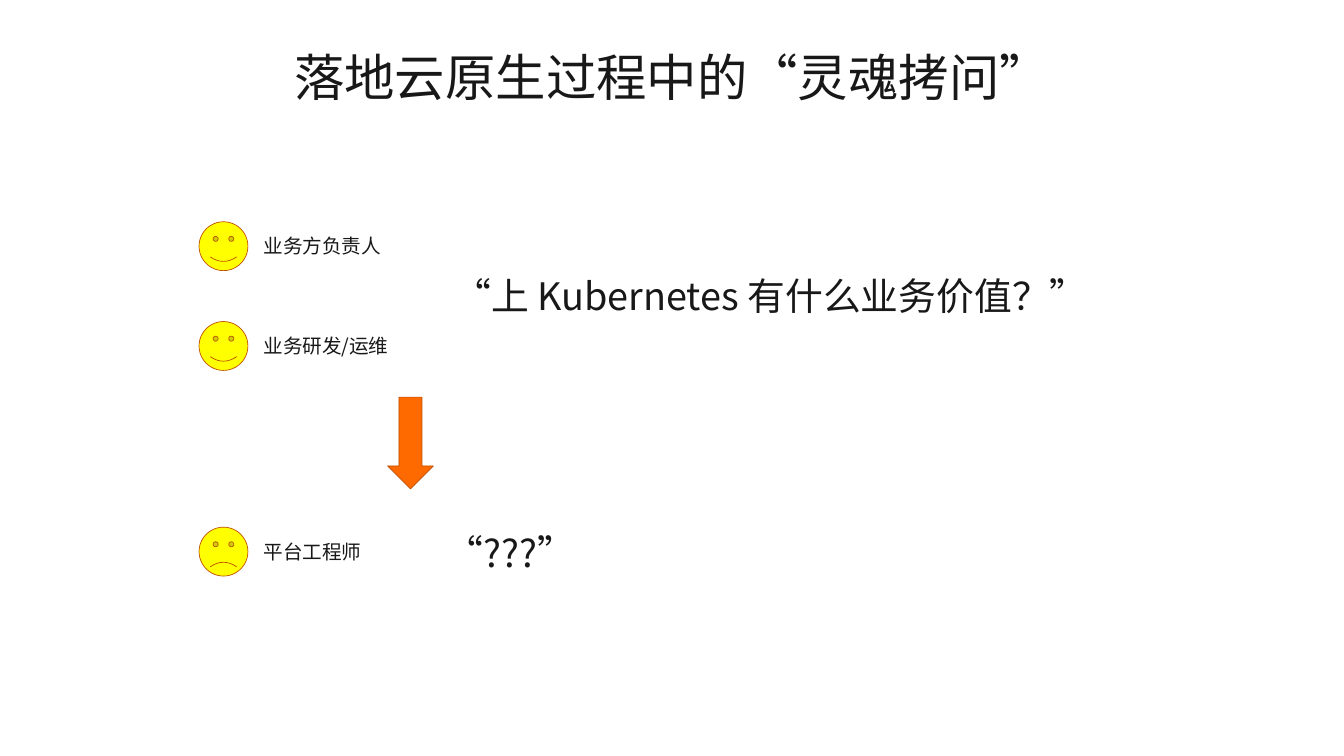
from pptx import Presentation
from pptx.dml.color import RGBColor
from pptx.enum.lang import MSO_LANGUAGE_ID
from pptx.enum.shapes import MSO_SHAPE
from pptx.enum.text import MSO_ANCHOR, MSO_AUTO_SIZE, PP_ALIGN
from pptx.oxml.ns import qn
from pptx.util import Pt
from lxml import etree

EMU_PER_PX = 9144
FONT = "Noto Sans CJK SC"
INK = RGBColor(0x18, 0x18, 0x18)
YELLOW = RGBColor(0xFF, 0xFF, 0x00)
ORANGE = RGBColor(0xFF, 0x6A, 0x00)
BROWN = RGBColor(0xBD, 0x4E, 0x00)
CHINESE = MSO_LANGUAGE_ID.SIMPLIFIED_CHINESE
SMILEY, DOWN_ARROW = MSO_SHAPE.SMILEY_FACE, MSO_SHAPE.DOWN_ARROW
TOP, LEFT, CENTER = MSO_ANCHOR.TOP, PP_ALIGN.LEFT, PP_ALIGN.CENTER
NO_AUTOFIT = MSO_AUTO_SIZE.NONE

FACE_SIZE = 97
SMILE, FROWN = 0.047, -0.047
PEOPLE = [
    ("业务方负责人", (395, 440, 374, 97), SMILE),
    ("业务研发/运维", (395, 638, 391, 97), SMILE),
    ("平台工程师", (395, 1046, 335, 97), FROWN),
]
QUOTES = [
    ("“上 Kubernetes 有什么业务价值？”", (890, 537, 1308, 101)),
    ("“???”", (875, 1046, 282, 101)),
]


def px(*lengths):
    """Turn px lengths into EMU."""
    return [length * EMU_PER_PX for length in lengths]


def write_text(shape, text, size, alignment=LEFT):
    """Put one formatted paragraph into a shape."""
    text_frame = shape.text_frame
    text_frame.text = text
    text_frame.word_wrap = True
    text_frame.auto_size = NO_AUTOFIT
    text_frame.vertical_anchor = TOP
    paragraph = text_frame.paragraphs[0]
    paragraph.alignment = alignment
    for run in paragraph.runs:
        run.font.size = Pt(size)
        run.font.name = FONT
        run.font.color.rgb = INK
        run.font.language_id = CHINESE
        east_asian = etree.SubElement(run.font._element, qn("a:ea"))
        east_asian.set("typeface", FONT)


def add_title(slide, box):
    """Move and fill the title placeholder."""
    title = slide.shapes.title
    title.left, title.top, title.width, title.height = px(*box)
    write_text(title, "落地云原生过程中的“灵魂拷问”", 72, CENTER)


def add_text(slide, box, text, size):
    """Add a text box."""
    write_text(slide.shapes.add_textbox(*px(*box)), text, size)


def add_symbol(slide, kind, box, color):
    """Add a filled preset shape with a thin brown outline."""
    shape = slide.shapes.add_shape(kind, *px(*box))
    shape.shadow.inherit = False
    shape.fill.solid()
    shape.fill.fore_color.rgb = color
    shape.line.color.rgb = BROWN
    shape.line.width = Pt(1)
    return shape


def add_person(slide, box, name, mood):
    """Add a face at the left of the box and its label beside it."""
    left, top, width, height = box
    face = add_symbol(slide, SMILEY, (left, top, FACE_SIZE, FACE_SIZE), YELLOW)
    face.adjustments[0] = mood
    label_offset = 118
    add_text(slide, (left + label_offset, top + 20, width - label_offset, 57), name, 28)


def main():
    """Build and save the slide."""
    presentation = Presentation()
    presentation.slide_width, presentation.slide_height = px(2667, 1500)
    slide = presentation.slides.add_slide(presentation.slide_layouts[5])
    add_title(slide, (395, 87, 1877, 131))
    for text, box in QUOTES:
        add_text(slide, box, text, 54)
    for name, box, mood in PEOPLE:
        add_person(slide, box, name, mood)
    add_symbol(slide, DOWN_ARROW, (769, 788, 91, 182), ORANGE)
    presentation.save("out.pptx")


if __name__ == "__main__":
    main()
